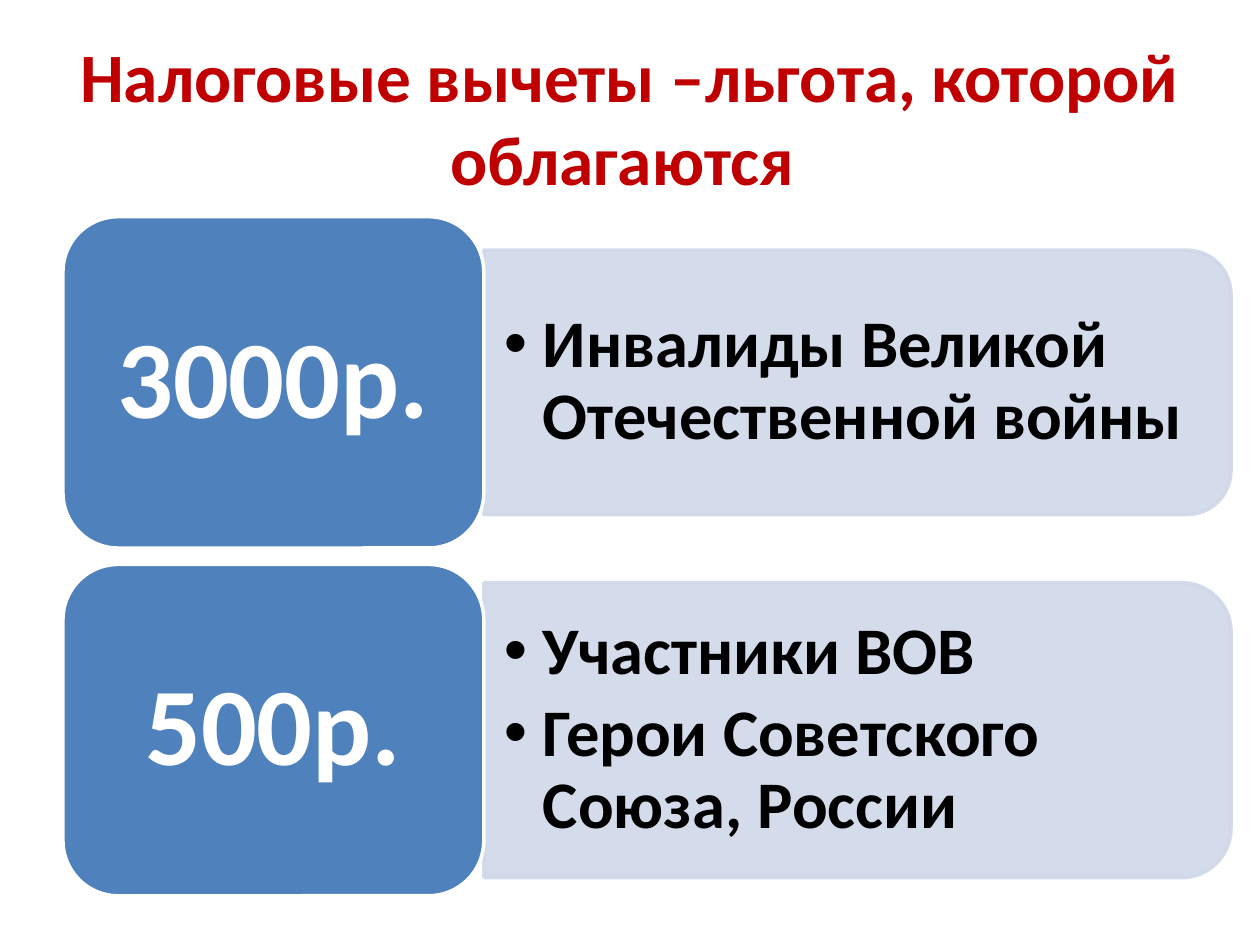
from lxml import etree
from pptx import Presentation
from pptx.dml.color import RGBColor
from pptx.enum.shapes import MSO_SHAPE
from pptx.enum.text import MSO_ANCHOR, MSO_AUTO_SIZE, PP_ALIGN
from pptx.oxml.ns import qn
from pptx.util import Inches, Pt

CARD_SHAPE = MSO_SHAPE.ROUNDED_RECTANGLE
PANEL_SHAPE = MSO_SHAPE.ROUND_2_SAME_RECTANGLE
MIDDLE = MSO_ANCHOR.MIDDLE
NO_FIT = MSO_AUTO_SIZE.NONE
CENTER, LEFT = PP_ALIGN.CENTER, PP_ALIGN.LEFT

COLUMNS, ROWS = 100, 75
TITLE = "Налоговые вычеты –льгота, которой облагаются "
# amount, people entitled to it, panel height in rows
DEDUCTIONS = [
    ("3000р.", ["Инвалиды Великой Отечественной войны"], 21),
    ("500р.", ["Участники ВОВ", "Герои Советского Союза, России"], 23.4),
]


def color(hex_string):
    return RGBColor.from_string(hex_string)


class DeductionSlide:
    font = "Calibri"
    red, blue, pale, white, black = "C00000", "4F81BD", "D0D8E8", "FFFFFF", "000000"
    opacity = 90

    def __init__(self, presentation):
        self.column = presentation.slide_width / COLUMNS
        self.row = presentation.slide_height / ROWS
        self.slide = presentation.slides.add_slide(presentation.slide_layouts[5])

    def box(self, left, top, width, height):
        """Turn columns and rows into slide lengths."""
        return (round(left * self.column), round(top * self.row),
                round(width * self.column), round(height * self.row))

    def set_text(self, shape, lines, size, hex_string, align, inset, line_spacing=1.0, after=0.0):
        """Fill a shape with bold lines; after is a share of the text size."""
        frame = shape.text_frame
        frame.text = "\n".join(lines)
        frame.word_wrap = True
        frame.auto_size = NO_FIT
        frame.vertical_anchor = MIDDLE
        frame.margin_left = frame.margin_right = Inches(inset)
        frame.margin_top = frame.margin_bottom = Inches(inset / 2)
        for paragraph in frame.paragraphs:
            paragraph.alignment = align
            paragraph.line_spacing = line_spacing
            paragraph.space_after = Pt(size * after)
            for run in paragraph.runs:
                run.font.name = self.font
                run.font.size = Pt(size)
                run.font.bold = True
                run.font.color.rgb = color(hex_string)

    def paint(self, shape, fill, line):
        shape.shadow.inherit = False
        shape.fill.solid()
        shape.fill.fore_color.rgb = color(fill)
        shape.line.color.rgb = color(line)
        shape.line.width = Pt(2)

    def title(self, text):
        title = self.slide.shapes.title
        title.left, title.top, title.width, title.height = self.box(5, 3, 90, 12.5)
        self.set_text(title, [text], 39.6, self.red, CENTER, 0.1)

    def panel(self, left, middle, width, height):
        """Add a panel with its right corners rounded by a quarter turn."""
        shape = self.slide.shapes.add_shape(PANEL_SHAPE, *self.box(
            left + (width - height) / 2, middle - width / 2, height, width))
        shape.rotation = 90
        self.paint(shape, self.pale, self.pale)
        for solid in shape.element.spPr.iter(qn("a:solidFill")):
            etree.SubElement(solid[0], qn("a:alpha"), val=str(self.opacity * 1000))

    def bullets(self, left, middle, width, height, lines):
        text_box = self.slide.shapes.add_textbox(
            *self.box(left, middle - height / 2, width, height))
        self.set_text(text_box, lines, 38, self.black, LEFT, 0.16, 0.9, 0.15)
        for paragraph in text_box.text_frame.paragraphs:
            properties = paragraph._p.get_or_add_pPr()
            properties.set("marL", str(Inches(0.31)))
            properties.set("indent", str(-Inches(0.31)))
            etree.SubElement(properties, qn("a:buFont"), typeface="Arial")
            etree.SubElement(properties, qn("a:buChar"), char="•")

    def card(self, left, middle, width, height, text):
        shape = self.slide.shapes.add_shape(
            CARD_SHAPE, *self.box(left, middle - height / 2, width, height))
        self.paint(shape, self.blue, self.white)
        self.set_text(shape, [text], 63, self.white, CENTER, 0.26, 0.9, 0.35)


def main():
    presentation = Presentation()
    presentation.slide_width, presentation.slide_height = Inches(10), Inches(7.5)
    slide = DeductionSlide(presentation)
    slide.title(TITLE)

    card_left, card_width, card_height = 5, 33.4, 26.3
    first_middle, step = 30.35, 27.6
    panel_left, panel_width, round_edge = card_left + card_width, 59.3, 1
    for index, (amount, people, panel_height) in enumerate(DEDUCTIONS):
        middle = first_middle + index * step
        slide.panel(panel_left, middle, panel_width, panel_height)
        slide.bullets(panel_left, middle, panel_width - round_edge,
                      panel_height - 2 * round_edge, people)
        slide.card(card_left, middle, card_width, card_height, amount)

    presentation.save("out.pptx")


if __name__ == "__main__":
    main()
